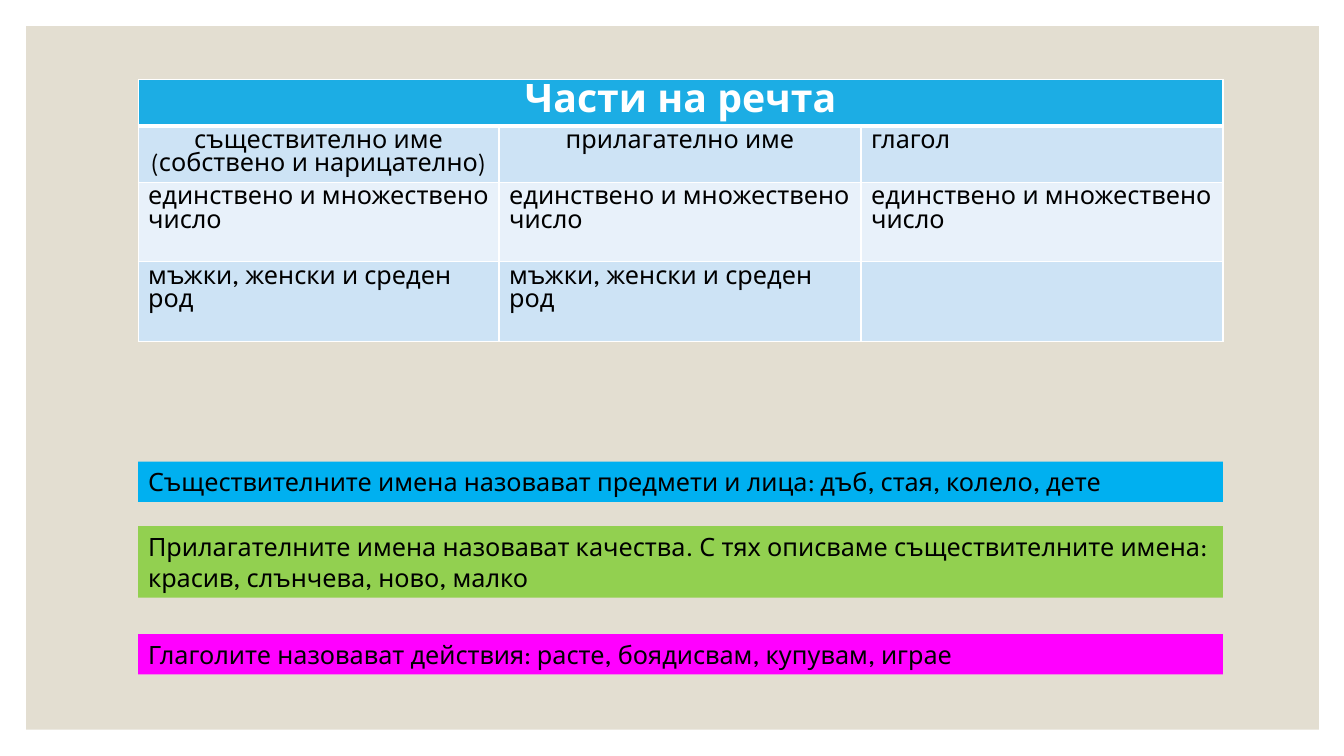
from lxml import etree
from pptx import Presentation
from pptx.dml.color import RGBColor
from pptx.enum.shapes import MSO_SHAPE
from pptx.enum.text import MSO_ANCHOR, PP_ALIGN
from pptx.oxml.ns import qn
from pptx.util import Inches, Pt

RECTANGLE = MSO_SHAPE.RECTANGLE
MIDDLE = MSO_ANCHOR.MIDDLE
LEFT, CENTER = PP_ALIGN.LEFT, PP_ALIGN.CENTER
FONT = "League Spartan"
BLACK, WHITE, BACKDROP = "000000", "FFFFFF", "E3DED1"
HEADER_FILL, BAND_DARK, BAND_LIGHT = "1CADE4", "CDE3F5", "E8F1FA"

TITLE = "Части на речта"
NUMBER = "единствено и множествено число"
GENDER = "мъжки, женски и среден род"
ROWS = [
    [["съществително име", "(собствено и нарицателно)"], ["прилагателно име"], ["глагол"]],
    [[NUMBER], [NUMBER], [NUMBER]],
    [[GENDER], [GENDER], []],
]
ROW_FILLS = [BAND_DARK, BAND_LIGHT, BAND_DARK]
ROW_HEIGHTS = [0.45, 0.56, 0.79, 0.79]
COLUMN_WIDTHS = [3.58, 3.59, 3.59]
CENTERED_CELLS = {(1, 0), (1, 1)}
RULES = [
    (4.58, 0.4, "00B0F0", "Съществителните имена назовават предмети и лица: дъб, стая, колело, дете"),
    (5.22, 0.71, "92D050", "Прилагателните имена назовават качества. С тях описваме "
     "съществителните имена: красив, слънчева, ново, малко"),
    (6.29, 0.4, "FF00FF", "Глаголите назовават действия: расте, боядисвам, купувам, играе"),
]
CONTENT_LEFT, TABLE_TOP = 1.37, 0.79
CONTENT_WIDTH = sum(COLUMN_WIDTHS)


def color(value):
    return RGBColor.from_string(value)


def write(frame, lines, size=18, text_color=BLACK, bold=False, alignment=LEFT):
    for index, line in enumerate(lines):
        paragraph = frame.add_paragraph() if index else frame.paragraphs[0]
        paragraph.alignment = alignment
        run = paragraph.add_run()
        run.text = line
        run.font.name, run.font.size, run.font.bold = FONT, Pt(size), bold
        run.font.color.rgb = color(text_color)


def add_rectangle(slide, left, top, width, height, fill):
    shape = slide.shapes.add_shape(
        RECTANGLE, Inches(left), Inches(top), Inches(width), Inches(height))
    shape.shadow.inherit = False
    shape.fill.solid()
    shape.fill.fore_color.rgb = color(fill)
    shape.line.fill.background()
    return shape


def style_cell(cell, fill, bottom_width):
    properties = cell._tc.get_or_add_tcPr()
    for side, width in (("L", 1), ("R", 1), ("T", 1), ("B", bottom_width)):
        border = etree.SubElement(properties, qn(f"a:ln{side}"), w=str(Pt(width)))
        solid = etree.SubElement(border, qn("a:solidFill"))
        etree.SubElement(solid, qn("a:srgbClr"), val=WHITE)
    cell.fill.solid()
    cell.fill.fore_color.rgb = color(fill)


def add_parts_table(slide):
    table = slide.shapes.add_table(
        len(ROW_HEIGHTS), len(COLUMN_WIDTHS), Inches(CONTENT_LEFT), Inches(TABLE_TOP),
        Inches(CONTENT_WIDTH), Inches(sum(ROW_HEIGHTS))).table
    for column, width in zip(table.columns, COLUMN_WIDTHS):
        column.width = Inches(width)
    for row, height in zip(table.rows, ROW_HEIGHTS):
        row.height = Inches(height)
    for cell in table.rows[0].cells:
        style_cell(cell, HEADER_FILL, 3)
    table.cell(0, 0).merge(table.cell(0, len(COLUMN_WIDTHS) - 1))
    write(table.cell(0, 0).text_frame, [TITLE], 28, WHITE, True, CENTER)
    for row_index, (fill, row) in enumerate(zip(ROW_FILLS, ROWS), 1):
        for column_index, lines in enumerate(row):
            cell = table.cell(row_index, column_index)
            style_cell(cell, fill, 1)
            centered = (row_index, column_index) in CENTERED_CELLS
            write(cell.text_frame, lines, alignment=CENTER if centered else LEFT)


def main():
    """Build the slide about the parts of speech."""
    presentation = Presentation()
    presentation.slide_width, presentation.slide_height = Inches(13.33), Inches(7.5)
    slide = presentation.slides.add_slide(presentation.slide_layouts[6])
    add_rectangle(slide, 0.26, 0.26, 12.82, 6.98, BACKDROP)
    add_parts_table(slide)
    for top, height, fill, text in RULES:
        shape = add_rectangle(slide, CONTENT_LEFT, top, CONTENT_WIDTH, height, fill)
        shape.text_frame.word_wrap = True
        shape.text_frame.vertical_anchor = MIDDLE
        write(shape.text_frame, [text])
    presentation.save("out.pptx")


if __name__ == "__main__":
    main()
